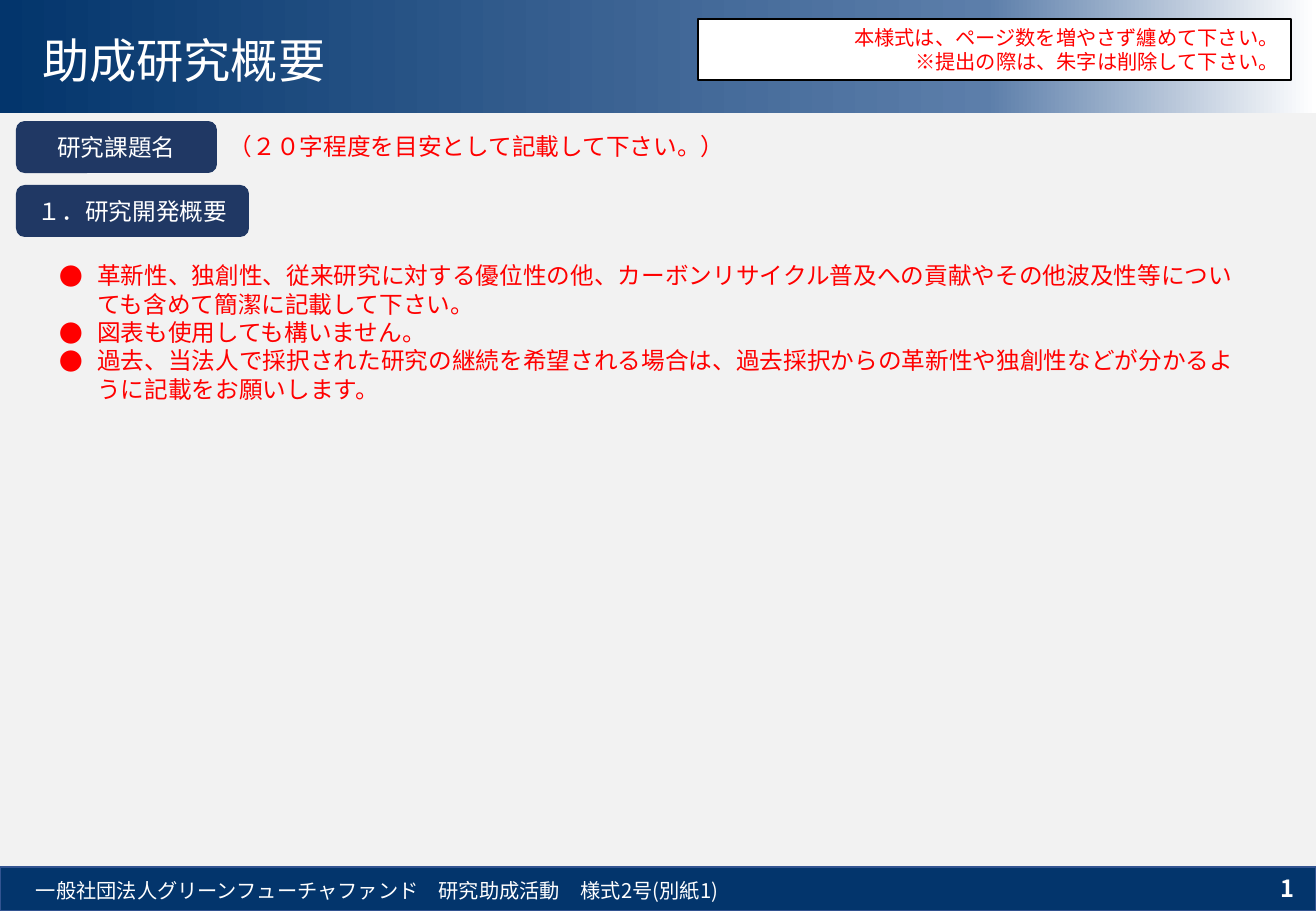
import copy

import pptx
import pptx.dml.color
import pptx.enum.shapes
import pptx.enum.text
import pptx.oxml.ns
import pptx.util
from lxml import etree

PX = 914400 / 121.5
COLORS = {
    "navy": "03356C", "steel": "5C7EAA", "white": "FFFFFF", "edge": "325491",
    "label": "203864", "red": "FF0000", "black": "000000", "paper": "F2F2F2",
}
GOTHIC, ROBOTO = "Noto Sans CJK JP", "Roboto"
ALIGN = pptx.enum.text.PP_ALIGN
ANCHOR = pptx.enum.text.MSO_ANCHOR
SHAPE = pptx.enum.shapes.MSO_SHAPE
qn = pptx.oxml.ns.qn


def emu(px):
    return pptx.util.Emu(round(px * PX))


def color(name):
    return pptx.dml.color.RGBColor.from_string(COLORS[name])


def place(box, bounds):
    box.left, box.top, box.width, box.height = map(emu, bounds)


def add_bullet(para, indent):
    properties = para._p.get_or_add_pPr()
    properties.set("marL", str(emu(indent)))
    properties.set("indent", str(-emu(indent)))
    etree.SubElement(properties, qn("a:buFont")).set("typeface", GOTHIC)
    etree.SubElement(properties, qn("a:buChar")).set("char", "●")


def write(box, lines, size, ink, font=GOTHIC, align=ALIGN.LEFT,
          anchor=ANCHOR.TOP, bold=False, indent=0):
    frame = box.text_frame
    frame.word_wrap = True
    frame.auto_size = pptx.enum.text.MSO_AUTO_SIZE.NONE
    frame.vertical_anchor = anchor
    frame.text = "\n".join(lines)
    for para in frame.paragraphs:
        para.alignment = align
        para.line_spacing = pptx.util.Pt(round(size * 1.2, 1))
        para.space_before = pptx.util.Pt(0)
        if indent:
            add_bullet(para, indent)
        para.font.size = pptx.util.Pt(size)
        para.font.bold = bold
        para.font.color.rgb = color(ink)
        para.font.name = font
        # East Asian glyphs need their own typeface entry
        defaults = para._p.pPr.find(qn("a:defRPr"))
        etree.SubElement(defaults, qn("a:ea")).set("typeface", font)


def add_panel(page, kind, bounds, fill, line=None):
    panel = page.shapes.add_shape(kind, *map(emu, bounds))
    panel.shadow.inherit = False
    panel.fill.solid()
    panel.fill.fore_color.rgb = color(fill)
    if line:
        panel.line.color.rgb = color(line)
        panel.line.width = pptx.util.Pt(1)
    else:
        panel.line.fill.background()
    return panel


def add_band(page, bounds, stops):
    band = add_panel(page, SHAPE.RECTANGLE, bounds, "navy")
    band.fill.gradient()
    band.fill.gradient_angle = 0
    stop_list = band._element.spPr.find(qn("a:gradFill")).find(qn("a:gsLst"))
    stop_list.append(copy.deepcopy(stop_list[0]))
    for stop, (position, name) in zip(band.fill.gradient_stops, stops):
        stop.position = position
        stop.color.rgb = color(name)


def add_label(page, bounds, text):
    label = add_panel(page, SHAPE.ROUNDED_RECTANGLE, bounds, "label")
    write(label, [text], 14, "white", ROBOTO, ALIGN.CENTER, ANCHOR.MIDDLE)


def add_text(page, bounds, text, size, ink, **style):
    box = page.shapes.add_textbox(*map(emu, bounds))
    write(box, [text], size, ink, **style)


def main():
    deck = pptx.Presentation()
    deck.slide_width, deck.slide_height = emu(1316), emu(911)
    page = deck.slides.add_slide(deck.slide_layouts[1])
    page.background.fill.solid()
    page.background.fill.fore_color.rgb = color("paper")
    title, body = page.placeholders

    # Header band and footer bar
    add_band(page, (0, 0, 1316, 113),
             [(0, "navy"), (0.75, "steel"), (1, "white")])
    add_panel(page, SHAPE.RECTANGLE, (0, 867, 1316, 44), "navy", "edge")
    add_text(page, (24, 872, 816, 36),
             "一般社団法人グリーンフューチャファンド　研究助成活動　様式2号(別紙1)",
             12, "white")
    add_text(page, (1202, 864, 104, 48), "1", 14, "white",
             align=ALIGN.RIGHT, anchor=ANCHOR.MIDDLE, bold=True)

    # Title, raised above the band
    page.shapes._spTree.append(title._element)
    place(title, (30, 12, 1041, 96))
    write(title, ["助成研究概要"], 28, "white", anchor=ANCHOR.MIDDLE)

    # Notice for the applicant
    notice = add_panel(page, SHAPE.RECTANGLE, (698, 19, 593, 61),
                       "white", "black")
    write(notice, ["本様式は、ページ数を増やさず纏めて下さい。",
                   "※提出の際は、朱字は削除して下さい。"],
          12, "red", align=ALIGN.RIGHT)

    # Section labels and the topic hint
    add_label(page, (16, 121, 201, 52), "研究課題名")
    add_text(page, (217, 126, 942, 41),
             "（２０字程度を目安として記載して下さい。）", 14, "red", font=ROBOTO)
    add_label(page, (16, 185, 233, 52), "１．研究開発概要")

    # Writing instructions
    place(body, (47, 255, 1202, 156))
    write(body, [
        "革新性、独創性、従来研究に対する優位性の他、カーボンリサイクル普及への貢献や"
        "その他波及性等についても含めて簡潔に記載して下さい。",
        "図表も使用しても構いません。",
        "過去、当法人で採択された研究の継続を希望される場合は、過去採択からの革新性や"
        "独創性などが分かるように記載をお願いします。",
    ], 14, "red", indent=38)

    deck.save("out.pptx")


if __name__ == "__main__":
    main()
